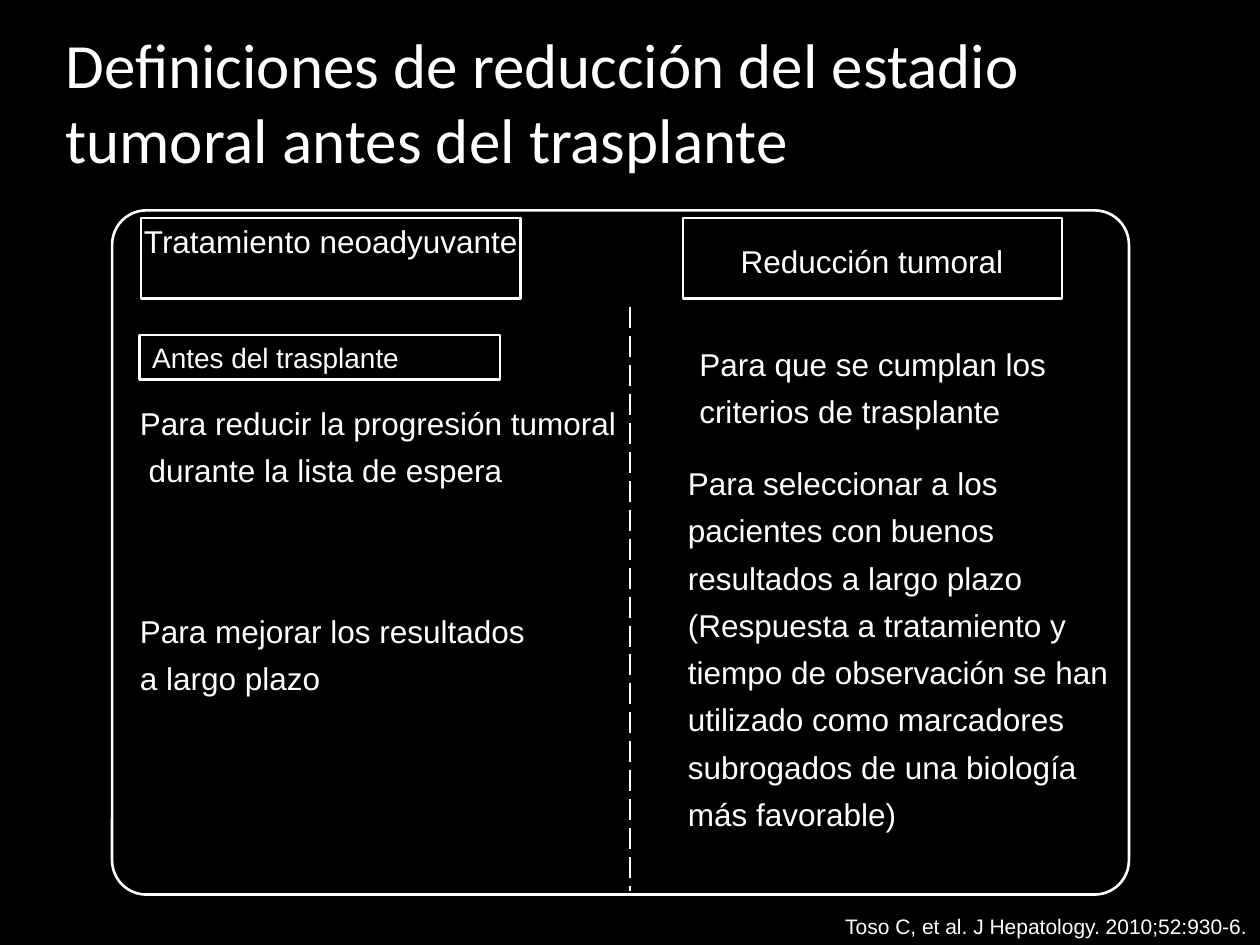
from dataclasses import dataclass

import pptx
import pptx.dml.color
import pptx.enum.dml
import pptx.enum.shapes
import pptx.enum.text
import pptx.oxml.ns
import pptx.util
from lxml import etree

Inches = pptx.util.Inches
Align = pptx.enum.text.PP_ALIGN
Anchor = pptx.enum.text.MSO_ANCHOR
Preset = pptx.enum.shapes.MSO_SHAPE


@dataclass(frozen=True)
class Theme:
    background: str = "000000"
    ink: str = "FFFFFF"
    title_font: str = "Calibri"
    body_font: str = "Arial"
    title_size: int = 36
    body_size: int = 18
    label_size: int = 16
    citation_size: int = 12
    line_width: float = 1.5
    body_spacing: float = 1.25


@dataclass(frozen=True)
class Area:
    left: float
    top: float
    width: float
    height: float

    def lengths(self) -> tuple:
        return tuple(Inches(v) for v in (self.left, self.top, self.width, self.height))


@dataclass(frozen=True)
class Passage:
    area: Area
    text: str
    size: int
    align: Align = Align.LEFT
    spacing: float = 1.0
    wrap: bool = True


THEME = Theme()
INK = pptx.dml.color.RGBColor.from_string(THEME.ink)

# Frames: outer panel and the two column headings
PANEL = Area(0.89, 1.67, 8.07, 5.43)
HEADING_FRAMES = [Area(left, 1.73, 3.01, 0.64) for left in (1.12, 5.42)]
TIMING_FRAME = Area(1.11, 2.66, 2.86, 0.35)

HEADINGS = [
    Passage(Area(1.13, 1.76, 2.99, 0.35), "Tratamiento neoadyuvante",
            THEME.body_size, Align.CENTER, wrap=False),
    Passage(Area(5.87, 1.92, 2.1, 0.3), "Reducción tumoral",
            THEME.body_size, Align.CENTER, wrap=False),
]
GOALS = [
    Passage(area, text, THEME.body_size, spacing=THEME.body_spacing)
    for area, text in (
        (Area(1.11, 3.13, 3.95, 0.76),
         "Para reducir la progresión tumoral\n durante la lista de espera"),
        (Area(1.11, 4.78, 3.16, 0.72),
         "Para mejorar los resultados\na largo plazo"),
        (Area(5.55, 2.66, 2.85, 1.1),
         "Para que se cumplan los\ncriterios de trasplante"),
        (Area(5.46, 3.61, 3.42, 3.03),
         "Para seleccionar a los pacientes con buenos resultados a largo plazo "
         "(Respuesta a tratamiento y tiempo de observación se han utilizado como "
         "marcadores subrogados de una biología más favorable)"),
    )
]
CITATION = Passage(Area(6.1, 7.19, 3.9, 0.31),
                   "Toso C, et al. J Hepatology. 2010;52:930-6.",
                   THEME.citation_size, Align.RIGHT)


def write(frame, text: str, size: int, font: str = THEME.body_font,
          align: Align = Align.LEFT, spacing: float = 1.0) -> None:
    frame.text = text
    for para in frame.paragraphs:
        para.alignment = align
        para.line_spacing = spacing
        for span in para.runs:
            span.font.name = font
            span.font.size = pptx.util.Pt(size)
            span.font.color.rgb = INK


def add_passage(page, passage: Passage, inset: float = 0):
    box = page.shapes.add_textbox(*passage.area.lengths())
    frame = box.text_frame
    frame.word_wrap = passage.wrap
    frame.margin_left = frame.margin_right = Inches(inset)
    frame.margin_top = frame.margin_bottom = Inches(inset / 2)
    write(frame, passage.text, passage.size, align=passage.align, spacing=passage.spacing)
    return box


def style_line(line) -> None:
    line.color.rgb = INK
    line.width = pptx.util.Pt(THEME.line_width)


def add_frame(page, area: Area, preset: Preset = Preset.RECTANGLE):
    box = page.shapes.add_shape(preset, *area.lengths())
    box.shadow.inherit = False
    box.fill.background()
    style_line(box.line)
    return box


def add_divider(page, x: float, top: float, bottom: float) -> None:
    divider = page.shapes.add_connector(
        pptx.enum.shapes.MSO_CONNECTOR.STRAIGHT,
        Inches(x), Inches(top), Inches(x), Inches(bottom))
    style_line(divider.line)
    divider.line.dash_style = pptx.enum.dml.MSO_LINE.LONG_DASH
    etree.SubElement(divider.element.spPr, pptx.oxml.ns.qn("a:effectLst"))


def add_title(page, area: Area, text: str) -> None:
    title = page.shapes.title
    title.left, title.top, title.width, title.height = area.lengths()
    frame = title.text_frame
    frame.auto_size = pptx.enum.text.MSO_AUTO_SIZE.NONE
    frame.vertical_anchor = Anchor.BOTTOM
    write(frame, text, THEME.title_size, THEME.title_font)
    frame.paragraphs[0].space_before = pptx.util.Pt(4)


def main() -> None:
    deck = pptx.Presentation()
    deck.slide_width, deck.slide_height = Inches(10), Inches(7.5)
    page = deck.slides.add_slide(deck.slide_layouts.get_by_name("Title Only"))
    page.background.fill.solid()
    page.background.fill.fore_color.rgb = pptx.dml.color.RGBColor.from_string(THEME.background)

    # Title and citation
    add_title(page, Area(0.42, 0.31, 9.15, 1.14),
              "Definiciones de reducción del estadio tumoral antes del trasplante")
    citation = add_passage(page, CITATION, inset=0.1)
    citation.text_frame.vertical_anchor = Anchor.BOTTOM

    # Panel with its two columns
    panel = add_frame(page, PANEL, Preset.ROUNDED_RECTANGLE)
    panel.adjustments[0] = 0.05
    for passage in HEADINGS + GOALS:
        add_passage(page, passage)
    for area in HEADING_FRAMES:
        add_frame(page, area)

    # Timing label and column divider
    timing = add_frame(page, TIMING_FRAME)
    timing.text_frame.vertical_anchor = Anchor.MIDDLE
    write(timing.text_frame, "Antes del trasplante", THEME.label_size)
    add_divider(page, 5, 2.44, 7.07)

    deck.save("out.pptx")


if __name__ == "__main__":
    main()
